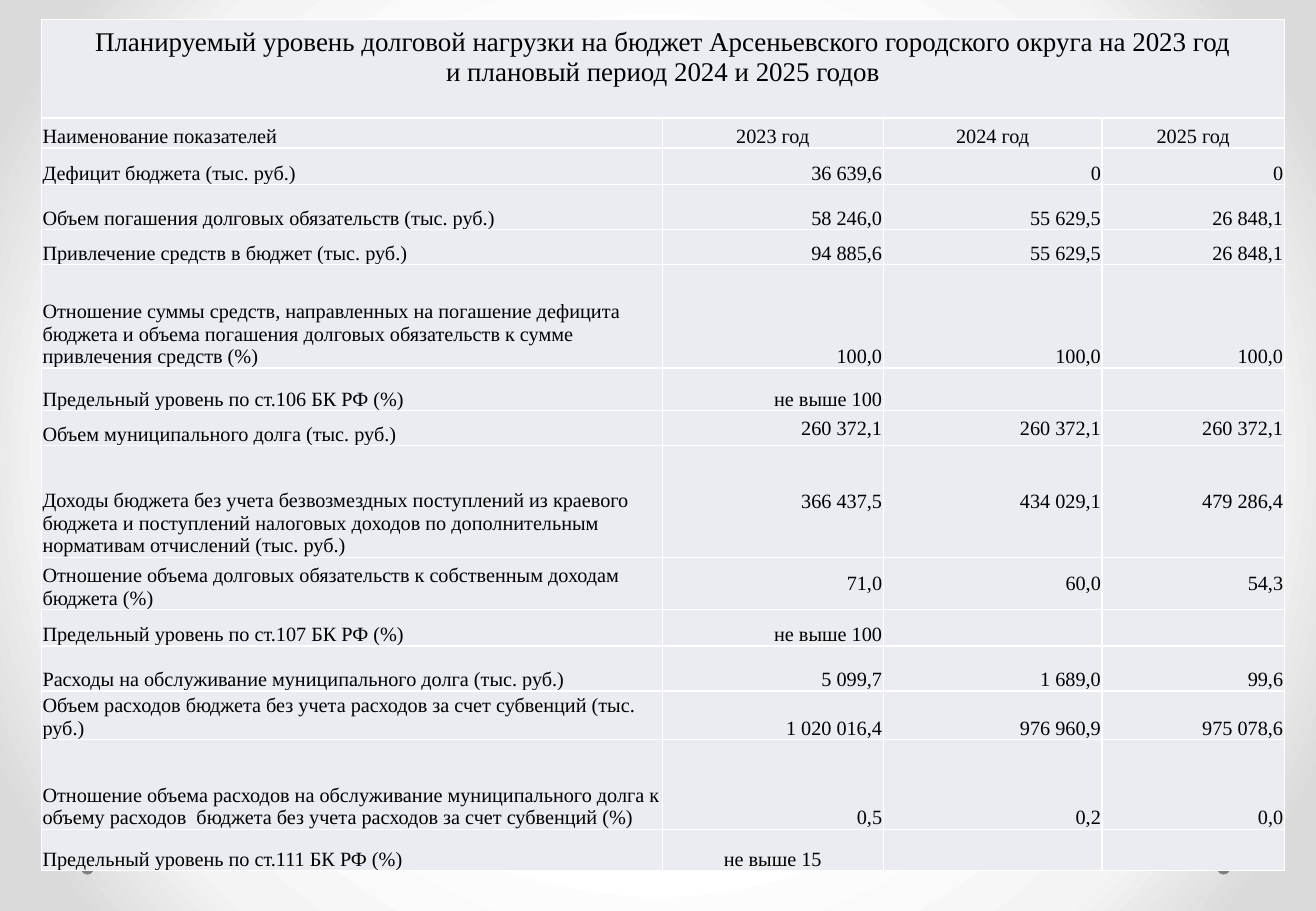
from lxml.etree import SubElement
from pptx import Presentation
from pptx.dml.color import RGBColor
from pptx.enum.shapes import MSO_SHAPE
from pptx.enum.text import MSO_ANCHOR, PP_ALIGN
from pptx.oxml import parse_xml
from pptx.oxml.ns import nsdecls, qn
from pptx.util import Inches, Pt

TITLE = (
    "Планируемый уровень долговой нагрузки на бюджет Арсеньевского городского округа на 2023 год\n"
    "и плановый период 2024 и 2025 годов"
)
COLUMN_WIDTHS = [5.11, 1.82, 1.8, 1.5]
TITLE_HEIGHT = 0.81
INDICATORS = [
    (0.25, "Наименование показателей", "2023 год", "2024 год", "2025 год"),
    (0.3, "Дефицит бюджета (тыс. руб.)", "36 639,6", "0", "0"),
    (0.37, "Объем погашения долговых обязательств (тыс. руб.)", "58 246,0", "55 629,5", "26 848,1"),
    (0.29, "Привлечение средств в бюджет (тыс. руб.)", "94 885,6", "55 629,5", "26 848,1"),
    (0.85, "Отношение суммы средств, направленных на погашение дефицита бюджета и объема погашения "
     "долговых обязательств к сумме привлечения средств (%)", "100,0", "100,0", "100,0"),
    (0.35, "Предельный уровень по ст.106 БК РФ (%)", "не выше 100", "", ""),
    (0.29, "Объем муниципального долга (тыс. руб.)", "260 372,1", "260 372,1", "260 372,1"),
    (0.92, "Доходы бюджета без учета безвозмездных поступлений из краевого бюджета и поступлений "
     "налоговых доходов по дополнительным нормативам отчислений (тыс. руб.)",
     "366 437,5", "434 029,1", "479 286,4"),
    (0.43, "Отношение объема долговых обязательств к собственным доходам бюджета (%)",
     "71,0", "60,0", "54,3"),
    (0.3, "Предельный уровень по ст.107 БК РФ (%)", "не выше 100", "", ""),
    (0.37, "Расходы на обслуживание муниципального долга (тыс. руб.)", "5 099,7", "1 689,0", "99,6"),
    (0.4, "Объем расходов бюджета без учета расходов за счет субвенций (тыс. руб.)",
     "1 020 016,4", "976 960,9", "975 078,6"),
    (0.74, "Отношение объема расходов на обслуживание муниципального долга к объему расходов  бюджета "
     "без учета расходов за счет субвенций (%)", "0,5", "0,2", "0,0"),
    (0.34, "Предельный уровень по ст.111 БК РФ (%)", "не выше 15", "", ""),
]
HEADER_ROW, LAST_ROW = 1, len(INDICATORS)
MIDDLE_ROWS = range(7, 10)


def color(value):
    """Return the colour for a hex string."""
    return RGBColor.from_string(value)


def paint_background(page):
    """Fill the page with a round gradient, white in the middle and grey outside."""
    page.background.fill.solid()
    properties = page.background._cSld.find(qn("p:bg")).find(qn("p:bgPr"))
    stops = "".join(
        f'<a:gs pos="{place * 1000}"><a:srgbClr val="{value}"/></a:gs>'
        for place, value in [(50, "FFFFFF"), (76, "F4F4F4"), (92, "DADADA")]
    )
    gradient = parse_xml(
        f'<a:gradFill {nsdecls("a")} rotWithShape="1"><a:gsLst>{stops}</a:gsLst>'
        '<a:path path="circle"><a:fillToRect l="50000" t="50000" r="50000" b="50000"/></a:path>'
        "</a:gradFill>"
    )
    properties.replace(properties.find(qn("a:solidFill")), gradient)


def add_dots(page, lefts, top):
    """Place the small grey footer dots."""
    for left in lefts:
        dot = page.shapes.add_shape(
            MSO_SHAPE.OVAL, Inches(left), Inches(top), Inches(0.1), Inches(0.09)
        )
        dot.shadow.inherit = False
        dot.fill.solid()
        dot.fill.fore_color.rgb = color("808080")
        dot.line.fill.background()


def add_borders(cell):
    """Draw a thin white line on each side of a cell."""
    properties = cell._tc.get_or_add_tcPr()
    for index, side in enumerate(["lnL", "lnR", "lnT", "lnB"]):
        line = SubElement(properties, qn(f"a:{side}"), w=str(Pt(1)))
        SubElement(SubElement(line, qn("a:solidFill")), qn("a:srgbClr"), val="FFFFFF")
        properties.insert(index, line)


def fill_cell(cell, text, size, align, anchor=MSO_ANCHOR.BOTTOM, bottom=0):
    """Write text into a cell and style it."""
    cell.text = text
    cell.vertical_anchor = anchor
    cell.margin_left = cell.margin_right = cell.margin_top = Inches(0.01)
    cell.margin_bottom = Inches(bottom)
    cell.fill.solid()
    cell.fill.fore_color.rgb = color("EAECF2")
    add_borders(cell)
    for para in cell.text_frame.paragraphs:
        para.alignment = align
        para.font.name = "Times New Roman"
        para.font.size = Pt(size)
        para.font.color.rgb = color("000000")


def cell_align(row, column):
    """Return the alignment of an indicator cell."""
    if column == 0:
        return PP_ALIGN.LEFT
    return PP_ALIGN.CENTER if row in (HEADER_ROW, LAST_ROW) else PP_ALIGN.RIGHT


def add_debt_table(page, left, top):
    """Build the debt load table from its top left corner."""
    heights = [TITLE_HEIGHT] + [indicator[0] for indicator in INDICATORS]
    table = page.shapes.add_table(
        len(heights), len(COLUMN_WIDTHS), Inches(left), Inches(top),
        Inches(sum(COLUMN_WIDTHS)), Inches(sum(heights)),
    ).table
    for column, width in zip(table.columns, COLUMN_WIDTHS):
        column.width = Inches(width)
    for row, height in zip(table.rows, heights):
        row.height = Inches(height)
    for cell in table.rows[0].cells:
        fill_cell(cell, "", 16, PP_ALIGN.CENTER)
    title = table.cell(0, 0)
    title.merge(table.cell(0, len(COLUMN_WIDTHS) - 1))
    fill_cell(title, TITLE, 16, PP_ALIGN.CENTER, bottom=0.25)
    for row, (_, *texts) in enumerate(INDICATORS, start=1):
        for column, text in enumerate(texts):
            middle = column > 0 and row in MIDDLE_ROWS
            anchor = MSO_ANCHOR.MIDDLE if middle else MSO_ANCHOR.BOTTOM
            fill_cell(table.cell(row, column), text, 12, cell_align(row, column), anchor)


def main():
    """Build and save the deck."""
    deck = Presentation()
    deck.slide_width, deck.slide_height = Inches(10.83), Inches(7.5)
    page = deck.slides.add_slide(deck.slide_layouts[6])
    paint_background(page)
    add_dots(page, [10.02, 0.67], 7.11)
    add_debt_table(page, 0.34, 0.16)
    deck.save("out.pptx")


if __name__ == "__main__":
    main()
